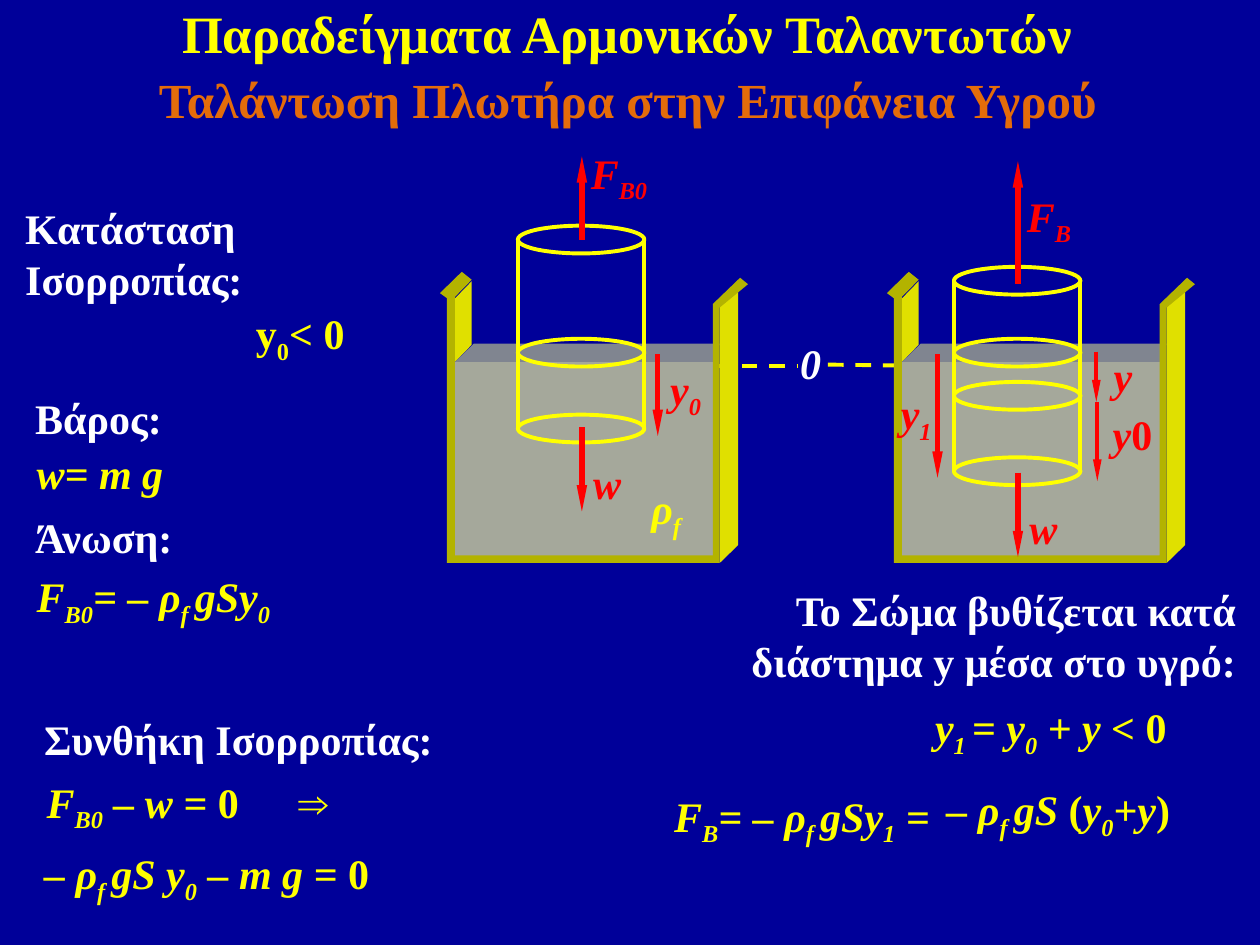
from lxml.etree import SubElement
from pptx import Presentation
from pptx.dml.color import RGBColor
from pptx.enum.dml import MSO_LINE
from pptx.enum.shapes import MSO_CONNECTOR, MSO_SHAPE
from pptx.enum.text import MSO_ANCHOR, PP_ALIGN
from pptx.oxml.ns import qn
from pptx.util import Cm, Pt

COLORS = {
    "background": "000099", "yellow": "FFFF00", "orange": "E46C0A",
    "white": "FFFFFF", "red": "FF0000", "wall": "B3B300",
    "wall_side": "E0E000", "water": "A5A89B", "surface": "808590",
}
FONT = "Times New Roman"

# Vessel faces, back to front, in cm from the vessel's left edge
VESSEL_FACES = [
    ("wall_side", [(0.16, 6.02), (0.5, 5.67), (0.5, 6.95), (0.16, 7.3)]),
    ("surface", [(0.16, 7.3), (0.54, 6.93), (5.5, 6.93), (5.36, 7.3)]),
    ("water", [(0.16, 7.3), (5.36, 7.3), (5.36, 11.2), (0.16, 11.2)]),
    ("wall_side", [(5.5, 6.17), (5.87, 5.75), (5.87, 10.99), (5.5, 11.35)]),
    ("wall", [(0, 5.95), (0.16, 5.95), (0.16, 11.2), (5.36, 11.2),
              (5.36, 6.13), (5.5, 6.13), (5.5, 11.35), (0, 11.35)]),
    ("wall", [(-0.14, 5.91), (0.3, 5.48), (0.5, 5.64), (0.08, 6.07)]),
    ("wall", [(5.36, 6.13), (5.91, 5.6), (6.07, 5.73), (5.5, 6.2)]),
]


def color(name):
    return RGBColor.from_string(COLORS[name])


class SlideBuilder:
    def __init__(self, page):
        self.page = page
        self.shapes = page.shapes
        page.background.fill.solid()
        page.background.fill.fore_color.rgb = color("background")

    def fill_text(self, box, spans, tint, size=24, italic=False,
                  align=PP_ALIGN.LEFT):
        """Fill a box; "_" starts a subscript span, "|" an upright one."""
        para = box.text_frame.paragraphs[0]
        para.alignment = align
        font = para.font
        font.name, font.size, font.bold = FONT, Pt(size), True
        font.italic = italic
        font.color.rgb = color(tint)
        for text in spans:
            span = para.add_run()
            span.text = text.lstrip("_|")
            if text.startswith("_"):
                span._r.get_or_add_rPr().set("baseline", "-25000")
            elif text.startswith("|"):
                span.font.italic = False

    def title(self, text):
        box = self.shapes.title
        box.left, box.top, box.width, box.height = (
            Cm(0.1), Cm(0.13), Cm(25.1), Cm(1.2))
        box.text_frame.vertical_anchor = MSO_ANCHOR.MIDDLE
        self.fill_text(box, [text], "yellow", 30, align=PP_ALIGN.CENTER)
        box.text_frame.paragraphs[0].line_spacing = 0.9

    def text(self, left, top, width, spans, tint="yellow", height=1.02,
             **style):
        box = self.shapes.add_textbox(Cm(left), Cm(top), Cm(width), Cm(height))
        frame = box.text_frame
        frame.word_wrap = True
        frame.margin_left = frame.margin_right = 0
        frame.margin_top = frame.margin_bottom = 0
        self.fill_text(box, spans, tint, **style)

    def line(self, start, end, tint="yellow", weight=2.25):
        line = self.shapes.add_connector(
            MSO_CONNECTOR.STRAIGHT, *[Cm(value) for value in start + end])
        line.line.color.rgb = color(tint)
        line.line.width = Pt(weight)
        SubElement(line._element.spPr, qn("a:effectLst"))
        return line

    def dash(self, start, end):
        self.line(start, end).line.dash_style = MSO_LINE.DASH

    def arrow(self, x, start, end, weight=3):
        """Vertical red arrow."""
        arrow = self.line((x, start), (x, end), "red", weight)
        SubElement(arrow.line._get_or_add_ln(), qn("a:tailEnd"),
                   type="triangle", w="sm", len="lg")

    def polygon(self, points, tint):
        corners = [(Cm(x), Cm(y)) for x, y in points]
        builder = self.shapes.build_freeform(*corners[0])
        builder.add_line_segments(corners[1:])
        shape = builder.convert_to_shape()
        shape.shadow.inherit = False
        shape.fill.solid()
        shape.fill.fore_color.rgb = color(tint)
        shape.line.fill.background()

    def vessel(self, left):
        for tint, points in VESSEL_FACES:
            self.polygon([(left + x, y) for x, y in points], tint)

    def cylinder(self, left, tops):
        """Float with one ring at each height, top to bottom."""
        width, ring_height = 2.55, 0.56
        for top in tops:
            ring = self.shapes.add_shape(
                MSO_SHAPE.OVAL, Cm(left), Cm(top), Cm(width), Cm(ring_height))
            ring.shadow.inherit = False
            ring.fill.background()
            ring.line.color.rgb = color("yellow")
            ring.line.width = Pt(2.25)
        middle = ring_height / 2
        for x in (left, left + width):
            self.line((x, tops[0] + middle), (x, tops[-1] + middle))


def main():
    deck = Presentation()
    deck.slide_width, deck.slide_height = Cm(25.4), Cm(19.05)
    slide = SlideBuilder(deck.slides.add_slide(deck.slide_layouts[5]))

    slide.title("Παραδείγματα Αρμονικών Ταλαντωτών")
    slide.text(0.1, 1.4, 25.1, ["Ταλάντωση Πλωτήρα στην Επιφάνεια Υγρού"],
               "orange", size=28, align=PP_ALIGN.CENTER)

    slide.dash((14.4, 7.37), (16.08, 7.37))
    slide.dash((16.69, 7.35), (18.26, 7.37))
    slide.text(16.13, 6.81, 0.61, ["0"], "white", italic=True)

    for left in (9.01, 18.02):
        slide.vessel(left)
    slide.cylinder(10.44, [4.55, 6.83, 8.36])
    slide.cylinder(19.23, [5.38, 6.83, 7.7, 9.22])

    for x, start, end in [
        (11.73, 4.83, 3.15), (11.73, 8.61, 10.31), (13.26, 7.14, 8.79),
        (20.52, 5.72, 3.25), (20.52, 9.53, 11.23), (18.9, 7.14, 9.63),
    ]:
        slide.arrow(x, start, end)
    slide.arrow(22.1, 7.09, 8.1, 2.5)
    slide.arrow(22.12, 8.1, 9.7, 2.5)

    for left, top, width, spans in [
        (11.91, 2.97, 1.37, ["F", "_B0"]), (11.96, 9.22, 0.81, ["w"]),
        (13.51, 7.32, 1.02, ["y", "_0"]), (20.7, 3.84, 1.02, ["F", "_B"]),
        (20.75, 10.13, 0.81, ["w"]), (18.16, 7.82, 0.79, ["y", "_1"]),
        (22.45, 7.06, 0.6, ["y"]), (22.43, 8.23, 0.9, ["y", "|_0"]),
    ]:
        slide.text(left, top, width, spans, "red", italic=True)

    for left, top, width, label in [
        (0.51, 4.09, 5.36, "Κατάσταση Ισορροπίας:"),
        (0.71, 7.92, 3.15, "Βάρος:"), (0.71, 10.31, 3.15, "Άνωση:"),
        (0.89, 14.38, 8.25, "Συνθήκη Ισορροπίας:"),
    ]:
        slide.text(left, top, width, [label], "white")
    slide.text(13.41, 11.79, 11.51,
               ["Το Σώμα βυθίζεται κατά διάστημα y μέσα στο υγρό:"],
               "white", height=2.06, align=PP_ALIGN.RIGHT)

    slide.text(5.16, 6.2, 2.16, ["y", "_0", "< 0"])
    for left, top, width, spans in [
        (13.13, 9.73, 0.81, ["ρ", "_f"]),
        (0.74, 9.02, 4.98, ["w= m g"]),
        (0.74, 11.51, 5.33, ["F", "_B0", "= – ρ", "_f ", "gSy", "_0"]),
        (0.94, 15.65, 6.27, ["F", "_B0", " – w = ", "|0\t⇒"]),
        (0.89, 17.09, 7.01,
         ["– ρ", "_f ", "gS y", "_0", " – m g = ", "|0"]),
        (18.85, 14.15, 4.9, ["y", "_1 ", "= y", "_0", " + y < ", "|0"]),
        (13.59, 15.93, 5.33, ["F", "_B", "= – ρ", "_f ", "gSy", "_1", " ="]),
        (19.08, 15.8, 4.88,
         ["– ρ", "_f ", "gS ", "|(", "y", "_0", "+y", "|)"]),
    ]:
        slide.text(left, top, width, spans, italic=True)

    deck.save("out.pptx")


if __name__ == "__main__":
    main()
